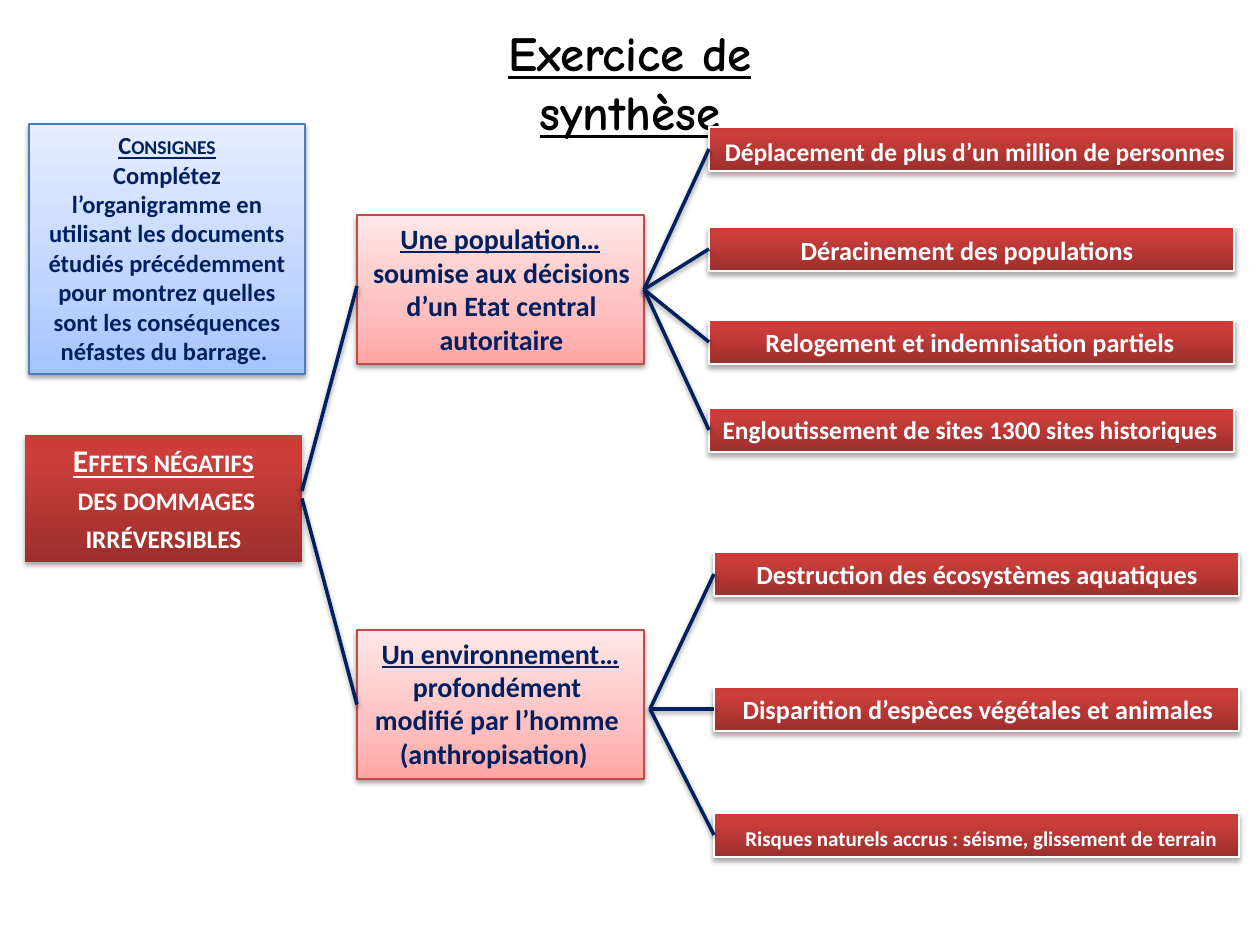
from dataclasses import dataclass

from lxml import etree
from pptx import Presentation
from pptx import util as u
from pptx.dml.color import RGBColor
from pptx.enum import shapes, text
from pptx.oxml.ns import qn

SCALE = 914400 / 126


@dataclass(frozen=True)
class Style:
    stops: tuple[tuple[int, str], ...]
    outline: str | None
    shadow: tuple[int, float, float]


@dataclass(frozen=True)
class Theme:
    body: str = "Calibri"
    heading: str = "Comic Neue"
    navy: str = "002060"
    white: str = "FFFFFF"
    black: str = "000000"
    title_size: float = 28
    root_size: float = 18
    branch_size: float = 16
    effect_size: float = 15
    tight_size: float = 14.5
    brief_size: float = 14
    small_size: float = 12
    line_shadow: tuple[int, float, float] = (38, 3.1, 1.6)


THEME = Theme()
RED_STOPS = ((0, "9C2F2D"), (80, "CB3E3A"), (100, "CE3B37"))
ROOT = Style(RED_STOPS, None, (35, 3.1, 1.8))
EFFECT = Style(RED_STOPS, THEME.white, (35, 3.1, 1.8))
BRANCH = Style(((0, "FFA6A5"), (35, "FFC0BF"), (100, "FFE7E7")), "BF4C48", THEME.line_shadow)
BRIEF = Style(((0, "A4C4FF"), (35, "BFD4FF"), (100, "E6EEFF")), "4B7EBC", THEME.line_shadow)


@dataclass(frozen=True)
class Box:
    left: int
    top: int
    width: int
    height: int

    def emu(self) -> tuple[int, ...]:
        return tuple(px(v) for v in (self.left, self.top, self.width, self.height))


@dataclass(frozen=True)
class Effect:
    words: str
    top: int
    label: Box
    size: float = THEME.effect_size
    inset: int | None = None


@dataclass(frozen=True)
class Branch:
    heading: str
    detail: str
    box: Box
    detail_box: Box
    fork: tuple[int, int]
    joined: bool
    effects_left: int
    effects: tuple[Effect, ...]


BRANCHES = (
    Branch("Une population…", "soumise aux décisions d’un Etat central autoritaire",
           Box(357, 215, 287, 149), Box(354, 249, 295, 115), (645, 291), True, 709, (
               Effect("Déplacement de plus d’un million de personnes", 127,
                      Box(709, 130, 532, 44), THEME.tight_size),
               Effect("Déracinement des populations ", 227, Box(709, 228, 522, 44)),
               Effect("Relogement et indemnisation partiels", 320, Box(709, 320, 522, 44)),
               Effect("Engloutissement de sites 1300 sites historiques", 408,
                      Box(709, 408, 522, 44), THEME.tight_size, 10))),
    Branch("Un environnement…", "profondément modifié par l’homme (anthropisation) ",
           Box(357, 630, 287, 149), Box(354, 663, 286, 115), (650, 709), False, 714, (
               Effect("Destruction des écosystèmes aquatiques", 552, Box(716, 552, 522, 44)),
               Effect("Disparition d’espèces végétales et animales", 687, Box(717, 687, 522, 44)),
               Effect("Risques naturels accrus : séisme, glissement de terrain", 813,
                      Box(718, 819, 527, 38), THEME.small_size, 0))),
)


def px(value: int) -> int:
    return round(value * SCALE)


def add_shadow(properties, shadow: tuple[int, float, float]) -> None:
    opacity, blur, distance = shadow
    effects = properties.find(qn("a:effectLst"))
    if effects is None:
        effects = etree.SubElement(properties, qn("a:effectLst"))
    outer = etree.SubElement(effects, qn("a:outerShdw"), blurRad=str(u.Pt(blur)),
                             dist=str(u.Pt(distance)), dir="5400000", rotWithShape="0")
    color = etree.SubElement(outer, qn("a:srgbClr"), val=THEME.black)
    etree.SubElement(color, qn("a:alpha"), val=str(opacity * 1000))


def add_block(slide, box: Box, style: Style):
    block = slide.shapes.add_shape(shapes.MSO_SHAPE.RECTANGLE, *box.emu())
    block.fill.gradient()
    block.fill.gradient_angle = 90
    properties = block._element.spPr
    stops = properties.find(qn("a:gradFill")).find(qn("a:gsLst"))
    for stop in list(stops):
        stops.remove(stop)
    for position, color in style.stops:
        stop = etree.SubElement(stops, qn("a:gs"), pos=str(position * 1000))
        etree.SubElement(stop, qn("a:srgbClr"), val=color)
    if style.outline:
        block.line.color.rgb = RGBColor.from_string(style.outline)
        block.line.width = u.Pt(0.75)
    else:
        block.line.fill.background()
    block.shadow.inherit = False
    add_shadow(properties, style.shadow)
    return block


def add_link(slide, start: tuple[int, int], end: tuple[int, int], source=None, target=None) -> None:
    link = slide.shapes.add_connector(shapes.MSO_CONNECTOR.STRAIGHT,
                                      *(px(v) for v in (*start, *end)))
    if source is not None:
        link.begin_connect(source, 3)
    if target is not None:
        link.end_connect(target, 1)
    link.line.color.rgb = RGBColor.from_string(THEME.navy)
    link.line.width = u.Pt(2)
    add_shadow(link._element.spPr, THEME.line_shadow)


def write(holder, *paragraphs: str, size: float, color: str, font: str = THEME.body,
          underline_first: bool = False, small_caps: int = 0, inset: int | None = None) -> None:
    frame = holder.text_frame
    frame.word_wrap = True
    frame.vertical_anchor = text.MSO_ANCHOR.TOP
    if inset is not None:
        frame.margin_left = frame.margin_right = px(inset)
    for index, words in enumerate(paragraphs):
        paragraph = frame.paragraphs[0] if index == 0 else frame.add_paragraph()
        paragraph.alignment = text.PP_ALIGN.CENTER
        run = paragraph.add_run()
        run.text = words
        run.font.name = font
        run.font.size = u.Pt(size)
        run.font.bold = True
        run.font.color.rgb = RGBColor.from_string(color)
        run.font.underline = underline_first and index == 0
        if index < small_caps:
            run.font._element.set("cap", "small")


def add_label(slide, box: Box, words: str, **style) -> None:
    write(slide.shapes.add_textbox(*box.emu()), words, **style)


def add_branch(slide, branch: Branch):
    block = add_block(slide, branch.box, BRANCH)
    write(block, branch.heading, size=THEME.branch_size, color=THEME.navy, underline_first=True)
    add_label(slide, branch.detail_box, branch.detail, size=THEME.branch_size, color=THEME.navy)
    for effect in branch.effects:
        bar = add_block(slide, Box(branch.effects_left, effect.top, 525, 44), EFFECT)
        add_link(slide, branch.fork, (branch.effects_left, effect.top + 22),
                 block if branch.joined else None, bar)
        add_label(slide, effect.label, effect.words, size=effect.size, color=THEME.white,
                  inset=effect.inset)
    return block


def main() -> None:
    deck = Presentation()
    deck.slide_width, deck.slide_height = px(1260), px(945)
    slide = deck.slides.add_slide(deck.slide_layouts[6])

    add_label(slide, Box(416, 16, 428, 72), "Exercice de synthèse", size=THEME.title_size,
              color=THEME.black, font=THEME.heading, underline_first=True)
    root = add_block(slide, Box(25, 435, 277, 127), ROOT)
    write(root, "Effets négatifs", " des dommages irréversibles", size=THEME.root_size,
          color=THEME.white, underline_first=True, small_caps=2)
    brief = add_block(slide, Box(29, 124, 276, 250), BRIEF)
    write(brief, "Consignes",
          "Complétez l’organigramme en utilisant les documents étudiés précédemment "
          "pour montrez quelles sont les conséquences néfastes du barrage. ",
          size=THEME.brief_size, color=THEME.navy, underline_first=True, small_caps=1)

    population, environment = (add_branch(slide, branch) for branch in BRANCHES)
    add_link(slide, (302, 491), (357, 286))
    add_link(slide, (302, 499), (357, 704), root, environment)
    deck.save("out.pptx")


if __name__ == "__main__":
    main()
